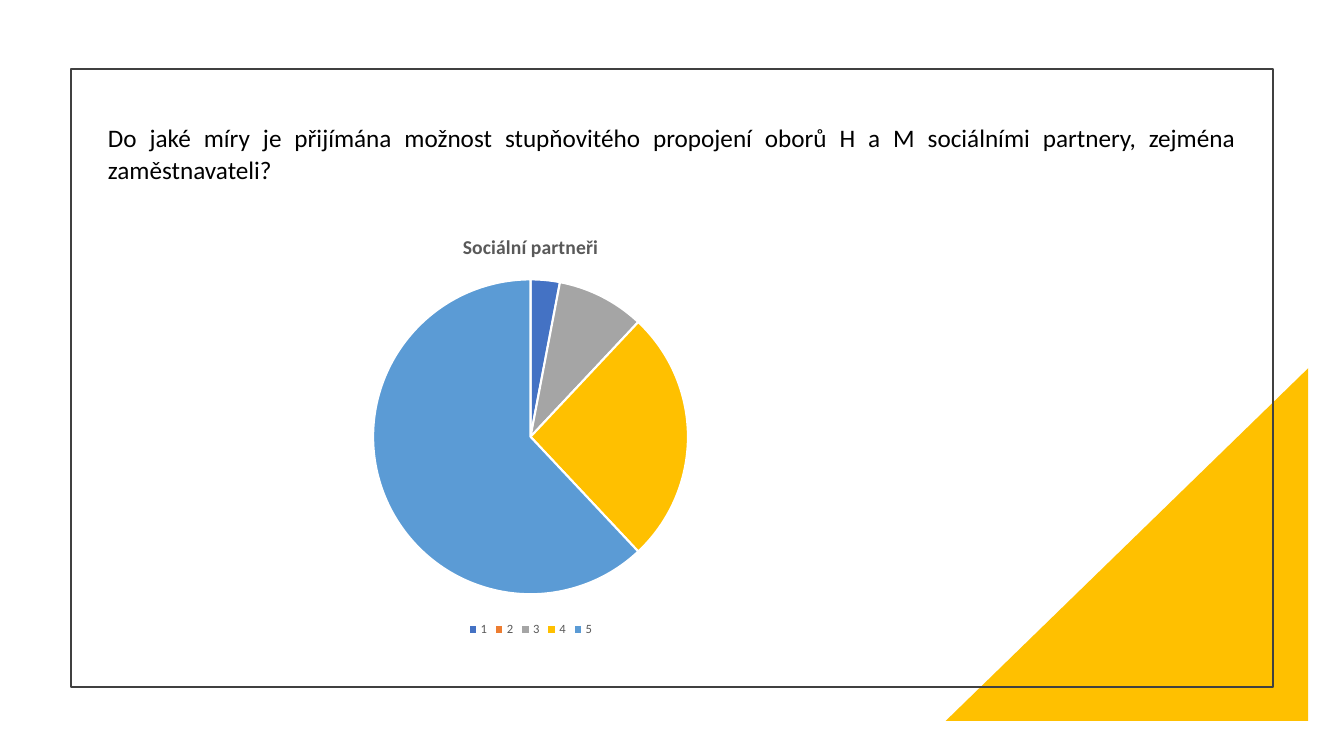
from lxml import etree
from pptx import Presentation
from pptx.chart.data import CategoryChartData
from pptx.dml.color import RGBColor
from pptx.enum import chart as charts, shapes, text
from pptx.oxml import ns
from pptx.util import Pt

FONT = "Calibri"
COLORS = {"accent": "FFC000", "frame": "404040", "question": "000000",
          "label": "595959", "gap": "FFFFFF"}
SLICES = [("1", 3, "4472C4"), ("2", 0, "ED7D31"), ("3", 9, "A5A5A5"),
          ("4", 26, "FFC000"), ("5", 62, "5B9BD5")]


def rgb(value):
    return RGBColor.from_string(value)


def format_font(font, size, color, bold=False):
    font.name, font.size, font.bold = FONT, Pt(size), bold
    font.color.rgb = rgb(color)


def write(frame, content, size, color, bold=False, align=None,
          line_spacing=None, space_after=None):
    paragraph = frame.paragraphs[0]
    paragraph.alignment = align
    paragraph.line_spacing = line_spacing
    if space_after is not None:
        paragraph.space_after = Pt(space_after)
    run = paragraph.add_run()
    run.text = content
    format_font(run.font, size, color, bold)


def add_corner(slide, left, top, width, height):
    corner = slide.shapes.add_shape(shapes.MSO_SHAPE.RIGHT_TRIANGLE,
                                    Pt(left), Pt(top), Pt(width), Pt(height))
    corner.shadow.inherit = False
    corner.fill.solid()
    corner.fill.fore_color.rgb = rgb(COLORS["accent"])
    corner.line.fill.background()
    corner._element.spPr.xfrm.set("flipH", "1")


def add_frame(slide, left, top, width, height):
    border = slide.shapes.add_shape(shapes.MSO_SHAPE.RECTANGLE,
                                    Pt(left), Pt(top), Pt(width), Pt(height))
    border.shadow.inherit = False
    border.fill.background()
    border.line.color.rgb = rgb(COLORS["frame"])
    border.line.width = Pt(1.5)


def add_question(slide, left, top, width, height):
    question = slide.shapes.add_textbox(Pt(left), Pt(top), Pt(width), Pt(height))
    question.text_frame.word_wrap = True
    write(question.text_frame,
          "Do jaké míry je přijímána možnost stupňovitého propojení oborů H a M "
          "sociálními partnery, zejména zaměstnavateli?",
          18, COLORS["question"], align=text.PP_ALIGN.JUSTIFY,
          line_spacing=1.07, space_after=8)


def place_plot(chart, **fractions):
    """Fix the inner plot area, in fractions of the chart."""
    plot_area = chart._chartSpace.chart.plotArea
    for old in plot_area.findall(ns.qn("c:layout")):
        plot_area.remove(old)
    layout = etree.Element(ns.qn("c:layout"))
    manual = etree.SubElement(layout, ns.qn("c:manualLayout"))
    settings = {"layoutTarget": "inner", "xMode": "edge", "yMode": "edge", **fractions}
    for tag, value in settings.items():
        etree.SubElement(manual, ns.qn(f"c:{tag}")).set("val", str(value))
    plot_area.insert(0, layout)


def add_partners_pie(slide, left, top, width, height):
    answers = CategoryChartData()
    answers.categories = [name for name, _, _ in SLICES]
    answers.add_series("Sociální partneři", [value for _, value, _ in SLICES])
    chart = slide.shapes.add_chart(charts.XL_CHART_TYPE.PIE, Pt(left), Pt(top),
                                   Pt(width), Pt(height), answers).chart
    format_font(chart.font, 10, COLORS["question"])
    chart.has_title = True
    write(chart.chart_title.text_frame, "Sociální partneři", 14,
          COLORS["label"], bold=True)
    chart.has_legend = True
    chart.legend.position = charts.XL_LEGEND_POSITION.BOTTOM
    chart.legend.include_in_layout = False
    format_font(chart.legend.font, 9, COLORS["label"])

    pie = chart.plots[0]
    pie.vary_by_categories = True
    for index, (_, _, color) in enumerate(SLICES):
        part = pie.series[0].points[index].format
        part.fill.solid()
        part.fill.fore_color.rgb = rgb(color)
        part.line.color.rgb = rgb(COLORS["gap"])
        part.line.width = Pt(1.5)
    place_plot(chart, x=0.27, y=0.15, w=0.46, h=0.74)


def main():
    deck = Presentation()
    deck.slide_width, deck.slide_height = Pt(960), Pt(540)
    slide = deck.slides.add_slide(deck.slide_layouts[6])
    add_corner(slide, 675.5, 263, 259, 252)
    add_frame(slide, 50.5, 49, 859, 441.5)
    add_question(slide, 70, 82, 820, 83.5)
    add_partners_pie(slide, 131, 154, 496, 304)
    deck.save("out.pptx")


if __name__ == "__main__":
    main()
